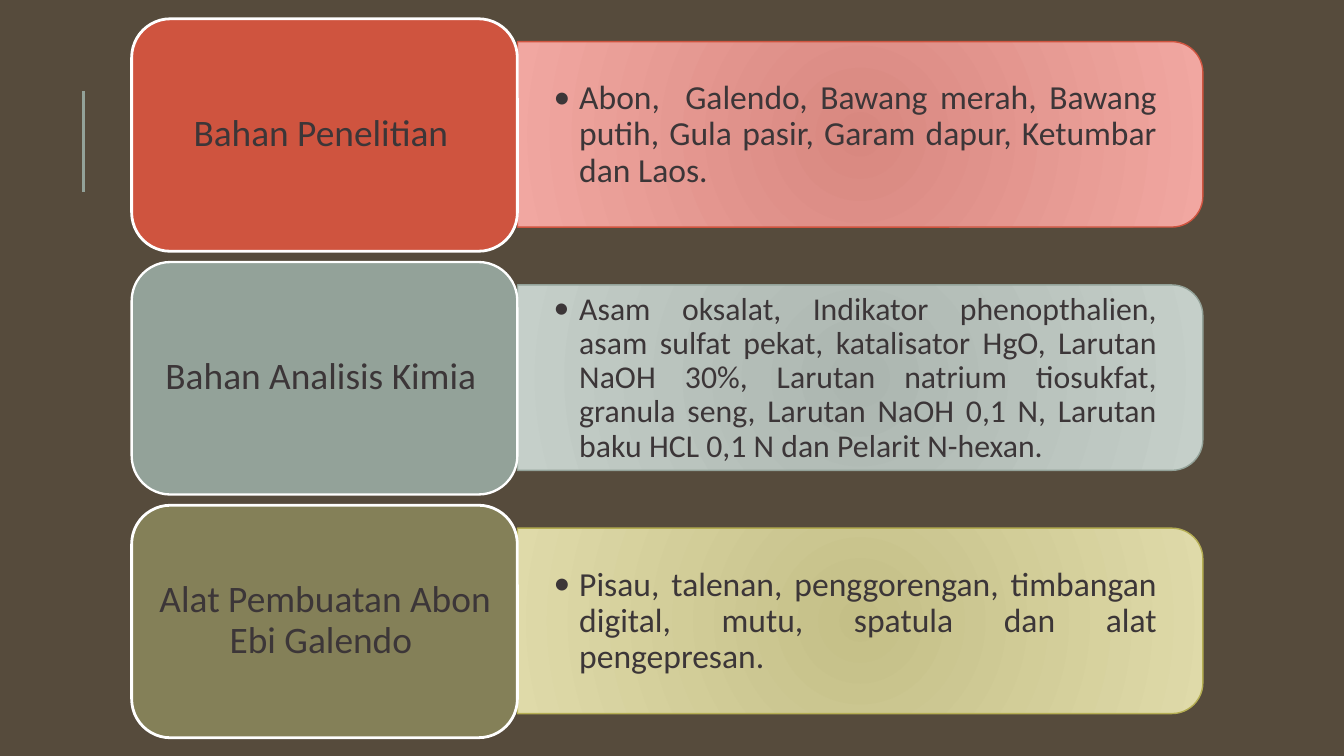
from dataclasses import dataclass

from lxml.etree import SubElement
from pptx import Presentation
from pptx.dml.color import RGBColor as RGB
from pptx.enum.shapes import MSO_CONNECTOR as CONN, MSO_SHAPE as SHAPE
from pptx.enum.text import MSO_ANCHOR as ANCHOR, PP_ALIGN as ALIGN
from pptx.oxml.ns import qn
from pptx.util import Inches, Pt


@dataclass(frozen=True)
class Theme:
    font: str = "Calibri"
    background: str = "564B3C"
    text: str = "3C3638"
    accent: str = "93A299"
    border: str = "FFFFFF"
    label_size: int = 20
    list_size: int = 18
    dense_size: int = 17


class Deck:
    """Holds the theme and the current slide."""

    def __init__(self, slide, theme):
        self.s, self.theme = slide, theme
        fill = slide.background.fill
        fill.solid()
        fill.fore_color.rgb = RGB.from_string(theme.background)

    def rule(self, x, top, bottom):
        ln = self.s.shapes.add_connector(
            CONN.STRAIGHT, Inches(x), Inches(bottom), Inches(x), Inches(top))
        ln.line.color.rgb = RGB.from_string(self.theme.accent)
        ln.line.width = Pt(1.5)
        SubElement(ln._element.spPr, qn("a:effectLst"))

    def shape(self, kind, box, line, width):
        sp = self.s.shapes.add_shape(kind, *map(Inches, box))
        sp.shadow.inherit = False
        sp.line.color.rgb = RGB.from_string(line)
        sp.line.width = Pt(width)
        return sp

    def label_box(self, box, color, width):
        sp = self.shape(SHAPE.ROUNDED_RECTANGLE, box, self.theme.border, width)
        sp.fill.solid()
        sp.fill.fore_color.rgb = RGB.from_string(color)

    def panel(self, box, colors, line):
        """Panel rounded on its right side: a top-rounded shape turned by 90 degrees."""
        x, y, w, h = box
        turned = (x + (w - h) / 2, y + (h - w) / 2, h, w)
        sp = self.shape(SHAPE.ROUND_2_SAME_RECTANGLE, turned, line, 0.75)
        sp.rotation = 90
        sp.fill.gradient()
        for stop, color, pos in zip(sp.fill.gradient_stops, colors, (0, 1)):
            stop.color.rgb = RGB.from_string(color)
            stop.position = pos
        # Radial gradient instead of the default linear one
        grad = sp._element.spPr.find(qn("a:gradFill"))
        grad.remove(grad.find(qn("a:lin")))
        radial = SubElement(grad, qn("a:path"), path="circle")
        SubElement(radial, qn("a:fillToRect"), {side: "100000" for side in "ltrb"})

    def text(self, box, text, size, align, inset):
        tf = self.s.shapes.add_textbox(*map(Inches, box)).text_frame
        tf.word_wrap = True
        tf.vertical_anchor = ANCHOR.MIDDLE
        tf.margin_left = tf.margin_right = Inches(inset[0])
        tf.margin_top = tf.margin_bottom = Inches(inset[1])
        p = tf.paragraphs[0]
        p.text = text
        p.alignment = align
        p.line_spacing = 0.9
        font = p.runs[0].font
        font.name, font.size = self.theme.font, Pt(size)
        font.color.rgb = RGB.from_string(self.theme.text)
        return p

    def bullet(self, box, text, size):
        p = self.text(box, text, size, ALIGN.JUSTIFY, (0.27, 0.14))
        p.level = 1
        pPr = p._p.get_or_add_pPr()
        pPr.set("marL", str(Inches(0.19)))
        pPr.set("indent", str(-Inches(0.19)))
        SubElement(pPr, qn("a:buFont"), typeface=self.theme.font)
        SubElement(pPr, qn("a:buChar"), char="•")


def main():
    theme = Theme()
    prs = Presentation()
    # Widescreen 16:9
    prs.slide_width = Inches(10)
    prs.slide_height = prs.slide_width * 9 // 16
    deck = Deck(prs.slides.add_slide(prs.slide_layouts[6]), theme)
    deck.rule(0.62, 0.68, 1.43)

    # Label, label colour, border width, panel gradient, panel line, list text, list size
    rows = [
        ("Bahan Penelitian ", "CF543F", 1.5, ("D88880", "F1A7A1"), "CF543F",
         "Abon,  Galendo, Bawang merah, Bawang putih, Gula pasir, Garam dapur, "
         "Ketumbar dan Laos. ", theme.list_size),
        ("Bahan Analisis Kimia ", "93A299", 1.25, ("ACB6B0", "C5CFC9"), "93A299",
         "Asam oksalat, Indikator phenopthalien, asam sulfat pekat, katalisator HgO, "
         "Larutan NaOH 30%, Larutan natrium tiosukfat, granula seng, Larutan NaOH "
         "0,1 N, Larutan baku HCL 0,1 N dan Pelarit N-hexan. ", theme.dense_size),
        ("Alat Pembuatan Abon Ebi Galendo ", "848058", 1.5, ("C4BF87", "DFDAA9"),
         "B5AE53", "Pisau, talenan, penggorengan, timbangan digital, mutu, spatula "
         "dan alat pengepresan. ", theme.list_size),
    ]
    top, pitch = 0.14, 1.81
    for i, (label, color, border, gradient, line, items, size) in enumerate(rows):
        y = top + i * pitch
        # Panel with its list
        deck.panel((3.85, y + 0.17, 5.1, 1.38), gradient, line)
        deck.bullet((3.85, y + 0.24, 5.03, 1.25), items, size)
        # Label on the left
        deck.label_box((0.98, y, 2.87, 1.73), color, border)
        deck.text((1.07, y + 0.08, 2.7, 1.56), label, theme.label_size,
                  ALIGN.CENTER, (0.08, 0.04))

    prs.save("out.pptx")


if __name__ == "__main__":
    main()
